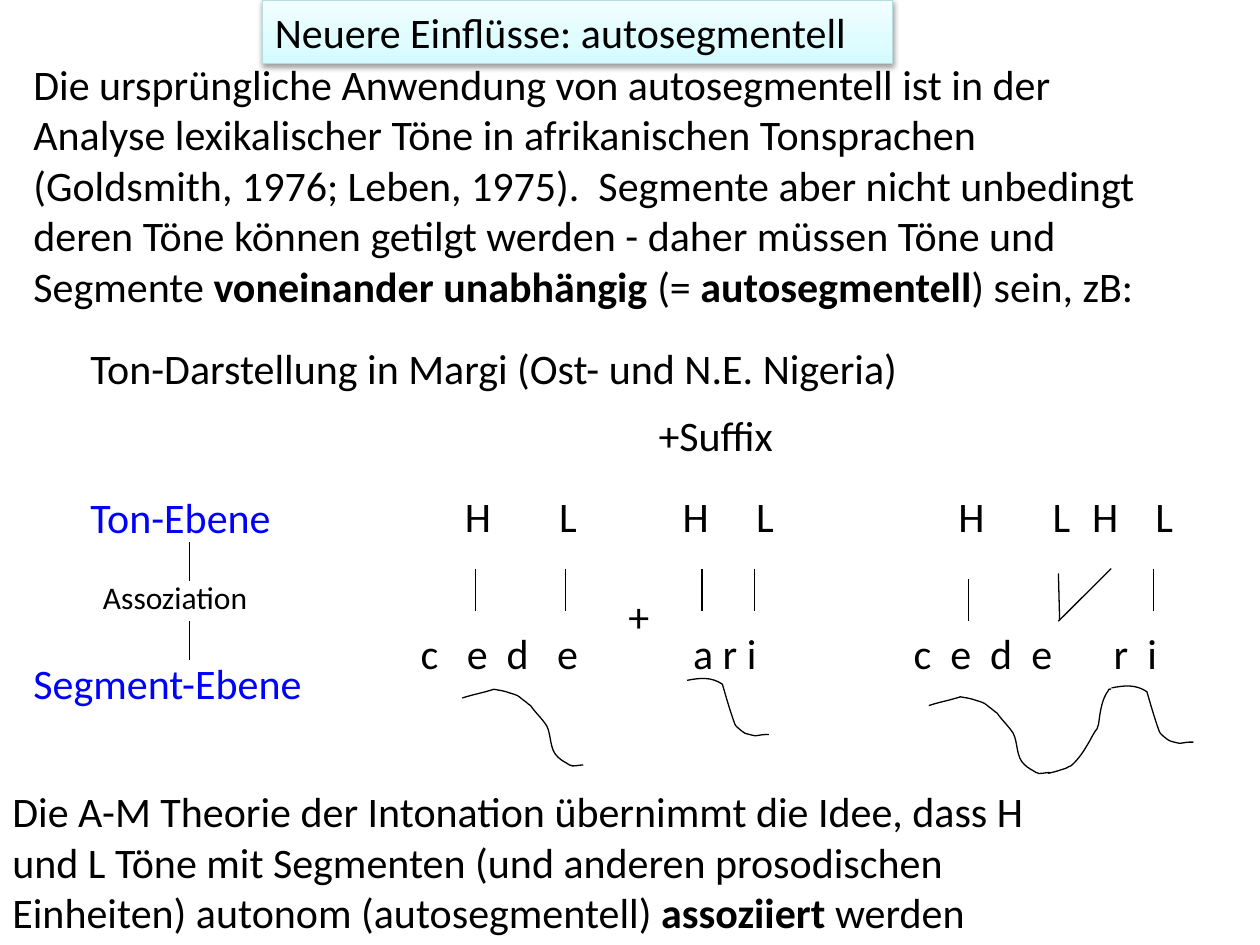
"""Build the slide on autosegmental tone association in Margi."""
from copy import deepcopy
from dataclasses import dataclass

from lxml.etree import SubElement
from pptx import Presentation
from pptx.dml.color import RGBColor
from pptx.enum.shapes import MSO_CONNECTOR as Connector, MSO_SHAPE as Preset
from pptx.enum.text import MSO_ANCHOR as Anchor, MSO_AUTO_SIZE as AutoSize, PP_ALIGN as Align
from pptx.oxml.ns import qn
from pptx.util import Pt


@dataclass(frozen=True)
class Theme:
    font: str = "Calibri"
    body: float = 24
    small: float = 18
    hairline: float = 0.75
    ink: str = "000000"
    tier: str = "0000FF"
    banner_edge: str = "B6DCDF"
    banner_stops: tuple = ((0, "D3FBFF"), (0.35, "DFFCFF"), (1, "F2FEFF"))


theme = Theme()
rgb = RGBColor.from_string

deck = Presentation()
deck.slide_width, deck.slide_height = Pt(720), Pt(540)
slide = deck.slides.add_slide(deck.slide_layouts[6])
shapes = slide.shapes


def write(text, left=0, top=0, width=0, height=36.4, size=theme.body,
          color=theme.ink, wrap=False, holder=None):
    """Write text into a holder or a new box; ** toggles bold."""
    if holder is None:
        holder = shapes.add_textbox(Pt(left), Pt(top), Pt(width), Pt(height))
    frame = holder.text_frame
    frame.word_wrap = wrap
    frame.auto_size = AutoSize.SHAPE_TO_FIT_TEXT
    frame.vertical_anchor = Anchor.TOP
    paragraph = frame.paragraphs[0]
    paragraph.alignment = Align.LEFT
    for index, part in enumerate(text.split("**")):
        run = paragraph.add_run()
        run.text = part
        run.font.name, run.font.size = theme.font, Pt(size)
        run.font.bold = index % 2 == 1
        run.font.color.rgb = rgb(color)


def trace(start, segments):
    """Draw an outline of curves (two handles, end) or straight lines (end)."""
    x, y = start
    builder = shapes.build_freeform(Pt(x), Pt(y))
    builder.add_line_segments([(Pt(x + s[-1][0]), Pt(y + s[-1][1])) for s in segments],
                              close=False)
    outline = builder.convert_to_shape()
    for line, segment in zip(list(outline._element.iter(qn("a:lnTo"))), segments):
        if len(segment) == 3:
            line.tag = qn("a:cubicBezTo")
            line.remove(line[0])
            for dx, dy in segment:
                SubElement(line, qn("a:pt"), x=str(Pt(x + dx) - outline.left),
                           y=str(Pt(y + dy) - outline.top))
    outline.fill.background()
    outline.line.color.rgb = rgb(theme.ink)
    outline.line.width = Pt(theme.hairline)
    outline.shadow.inherit = False


banner = shapes.add_shape(Preset.RECTANGLE, Pt(150), Pt(0), Pt(360), Pt(36.4))
banner.fill.gradient()
banner.fill.gradient_angle = 90
first_stop = banner._element.spPr.find(qn("a:gradFill")).find(qn("a:gsLst"))[0]
first_stop.addnext(deepcopy(first_stop))
for stop, (position, color) in zip(banner.fill.gradient_stops, theme.banner_stops):
    stop.position = position
    stop.color.rgb = rgb(color)
banner.line.color.rgb = rgb(theme.banner_edge)
banner.line.width = Pt(theme.hairline)
banner.shadow.inherit = False
glow = SubElement(banner._element.spPr.find(qn("a:effectLst")), qn("a:outerShdw"),
                  blurRad=str(Pt(3.1)), dist=str(Pt(1.6)), dir="5400000", rotWithShape="0")
shade = SubElement(glow, qn("a:srgbClr"), val=theme.ink)
SubElement(shade, qn("a:alpha"), val="38000")
write("Neuere Einflüsse: autosegmentell", holder=banner, wrap=True)

write("Die A-M Theorie der Intonation übernimmt die Idee, dass H und L Töne mit "
      "Segmenten (und anderen prosodischen Einheiten) autonom (autosegmentell) "
      "**assoziiert** werden", 0, 445.4, 612, 94.3, wrap=True)
write("Die ursprüngliche Anwendung von autosegmentell ist in der Analyse lexikalischer "
      "Töne in afrikanischen Tonsprachen (Goldsmith, 1976; Leben, 1975).  Segmente aber "
      "nicht unbedingt deren Töne können getilgt werden - daher müssen Töne und Segmente "
      "**voneinander unabhängig** (= **autosegmentell**) sein, zB:",
      12, 29.9, 660, 152.6, wrap=True)
write("Ton-Darstellung in Margi (Ost- und N.E. Nigeria)", 44.6, 192.2, 525, wrap=True)
write("+Suffix", 369.2, 230.4, 80.6)
write("+", 352, 334, 26.6)

tone_top, segment_top = 276.9, 355
write("Ton-Ebene", 44.6, 277.2, 121, color=theme.tier)
write("Assoziation", 51.8, 326.9, 136, 28.8, size=theme.small, wrap=True)
write("Segment-Ebene", 12, 372.2, 170, color=theme.tier)

for tone, width, lefts in (("H", 29.5, (258.5, 383, 540.5, 617)),
                           ("L", 24.5, (312.5, 425, 594.5, 653.2))):
    for left in lefts:
        write(tone, left, tone_top, width)

for segments, left, width in (("c   e  d   e", 233.3, 105.8), ("a r i", 389, 51.1),
                              ("c  e  d  e", 515, 94.3), ("r  i", 629.3, 39.6)):
    write(segments, left, segment_top, width)

link_top, link_bottom = 324.9, 349
links = [(x, link_bottom, x, link_top) for x in (271.7, 323.3, 401.2, 431.3, 659.1)]
links += [(108.4, y, 108.4, y + 22.3) for y in (309.6, 355)]
links += [(553.4, 355, 553.4, 330.7), (604.8, 355, 635, link_top)]
for x1, y1, x2, y2 in links:
    link = shapes.add_connector(Connector.STRAIGHT, Pt(x1), Pt(y1), Pt(x2), Pt(y2))
    link.line.color.rgb = rgb(theme.ink)
    link.line.width = Pt(theme.hairline)
    SubElement(link._element.spPr, qn("a:effectLst"))

long_fall = (((6, -2), (12, -3), (18, -5)), ((26, -3.6), (22.5, -4.3), (30, -2)),
             ((32.4, -1.4), (34, 0.7), (36, 2)), ((37, 3), (39, 4.3), (39, 4.3)),
             ((42, 8.6), (45.4, 11.5), (48.2, 15.8)),
             ((51, 21), (49.7, 29.5), (54.7, 33.8)),
             ((57, 36), (59, 36.7), (61.2, 38.2)),
             ((63.4, 39.6), (66.2, 38.2), (69.1, 38.2)))
short_fall = (((7.2, -1.4), (13.7, -2.2), (20.2, 2.2)),
              ((22.3, 9.4), (24.5, 17.3), (27.4, 25.2)),
              ((27.4, 26), (31.7, 29.5), (33.1, 30.2)),
              ((35.3, 31), (38.9, 31.7), (38.9, 31.7)),
              ((44.6, 31), (41.8, 31), (46.8, 31)))
rise = (((5.8, -1.4), (2.9, -0.7), (10.1, -2.9)), ((10.8, -3.6), (13, -4.3), (13, -4.3)),
        ((18, -8.6), (20.9, -13.7), (23.8, -18.7)),
        ((29.5, -29.5), (26.6, -21.6), (28.8, -28.1)),
        ((29.5, -33.1), (30.2, -40.3), (33.1, -45.4)),
        ((35.3, -48.2), (33.8, -48.2), (36, -48.2)))
slanted_link = (((-0.7, -26.9),),)
for start, segments in (((264.2, 398.9), long_fall), ((392.6, 388.8), short_fall),
                        ((605.5, 354.5), slanted_link), ((530.8, 403.2), long_fall),
                        ((599, 442), rise), ((635.2, 393.1), short_fall)):
    trace(start, segments)

deck.save("out.pptx")
